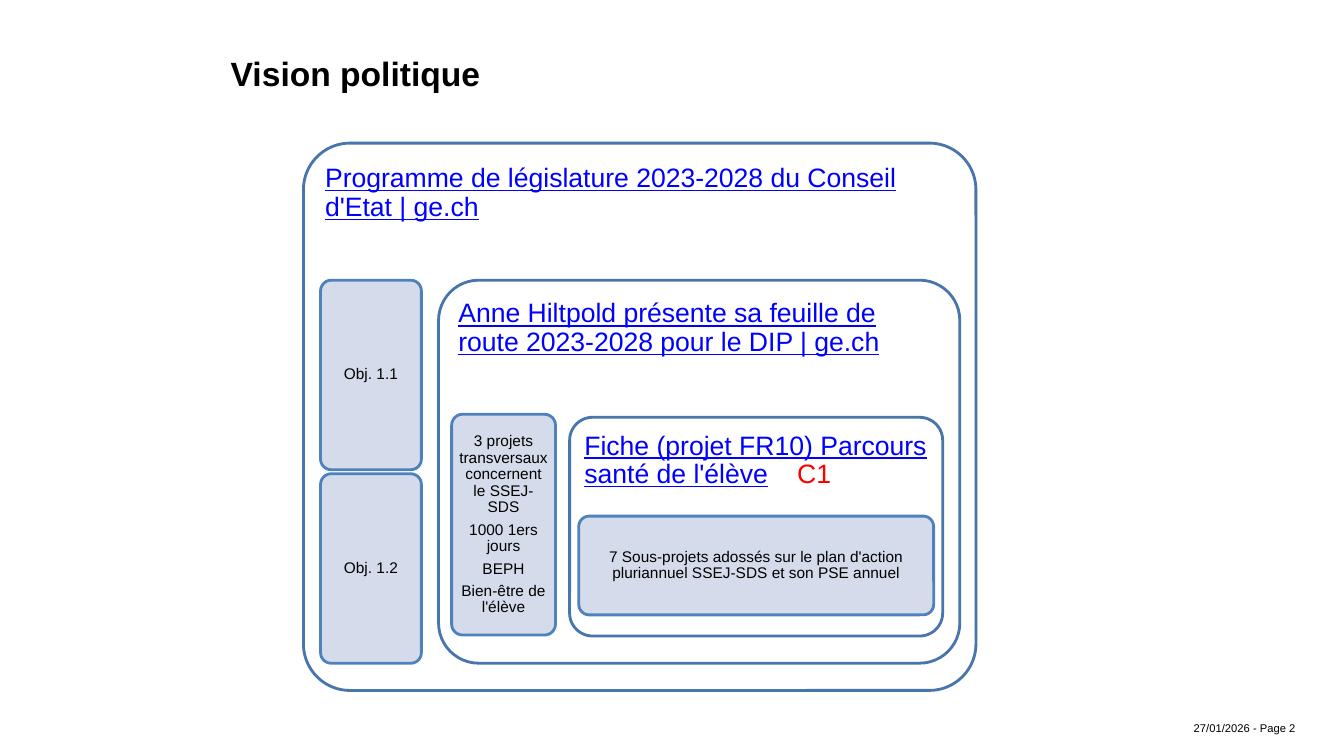
from lxml.etree import SubElement
from pptx import Presentation
from pptx.dml.color import RGBColor
from pptx.enum.shapes import MSO_SHAPE as Shape
from pptx.enum.text import MSO_ANCHOR as Anchor, PP_ALIGN as Align
from pptx.oxml.ns import qn
from pptx.util import Pt

PX = 9144
BLACK = RGBColor(0, 0, 0)
WHITE = RGBColor(255, 255, 255)
LINK = RGBColor(0, 0, 255)
RED = RGBColor(255, 0, 0)
PALE = RGBColor(0xD0, 0xD8, 0xE8)
EDGE = RGBColor(0x48, 0x75, 0xAC)
BLUE = RGBColor(0x4F, 0x81, 0xBD)

deck = Presentation()
deck.slide_width, deck.slide_height = 1333 * PX, 750 * PX
slide = deck.slides.add_slide(deck.slide_layouts[6])


def add_run(para, text, size, color, **extra):
    run = para.add_run()
    run.text = text
    look = {"name": "Arial", "size": Pt(size), **extra}
    for key, val in look.items():
        setattr(run.font, key, val)
    run.font.color.rgb = color


def add_box(spot, round_by, fill, edge, pad, anchor):
    box = slide.shapes.add_shape(Shape.ROUNDED_RECTANGLE, *[n * PX for n in spot])
    box.adjustments[0] = round_by
    box.shadow.inherit = False
    box.fill.solid()
    box.fill.fore_color.rgb = fill
    box.line.color.rgb = edge
    box.line.width = Pt(2)
    frame = box.text_frame
    look = {"word_wrap": True, "vertical_anchor": anchor}
    for side in ("left", "top", "right", "bottom"):
        look["margin_" + side] = pad * PX
    for key, val in look.items():
        setattr(frame, key, val)
    return box


labels = [
    ((219, 48, 900, 50), "Vision politique", 24, True, Align.LEFT),
    ((1112, 711, 183, 23), "27/01/2026 - Page 2", 8, False, Align.RIGHT),
]
for spot, text, size, bold, align in labels:
    frame = slide.shapes.add_textbox(*[n * PX for n in spot]).text_frame
    frame.word_wrap = True
    para = frame.paragraphs[0]
    para.alignment = align
    add_run(para, text, size, BLACK, bold=bold)

panels = [
    ((301, 142, 667, 543), 0.085,
     "Programme de législature 2023-2028 du Conseil d'Etat | ge.ch"),
    ((435, 278, 517, 380), 0.105,
     "Anne Hiltpold présente sa feuille de route 2023-2028 pour le DIP | ge.ch"),
    ((565, 414, 370, 217), 0.105,
     "Fiche (projet FR10) Parcours santé de l'élève"),
]
for spot, round_by, text in panels:
    box = add_box(spot, round_by, WHITE, EDGE, 8, Anchor.TOP)
    para = box.text_frame.paragraphs[0]
    para.alignment = Align.LEFT
    para.line_spacing = 0.9
    add_run(para, text, 19, LINK, underline=True)

tabs = SubElement(para._p.get_or_add_pPr(), qn("a:tabLst"))
SubElement(tabs, qn("a:tab"), pos=str(211 * PX), algn="l")
add_run(para, "\tC1", 19, RED, underline=False)

cards = [((318, 278 + 192 * i, 100, 188), [f"Obj. 1.{i + 1}"]) for i in range(2)]
cards += [
    ((448, 411, 103, 219), [
        "3 projets transversaux concernent le SSEJ-SDS",
        "1000 1ers jours",
        "BEPH",
        "Bien-être de l'élève",
    ]),
    ((574, 512, 352, 98), [
        "7 Sous-projets adossés sur le plan d'action "
        "pluriannuel SSEJ-SDS et son PSE annuel",
    ]),
]
for spot, lines in cards:
    box = add_box(spot, 0.105, PALE, BLUE, 3, Anchor.MIDDLE)
    tint = box._element.spPr.find(qn("a:solidFill"))[0]
    SubElement(tint, qn("a:alpha"), val="90000")
    frame = box.text_frame
    for i, text in enumerate(lines):
        para = frame.add_paragraph() if i else frame.paragraphs[0]
        para.alignment = Align.CENTER
        para.line_spacing = 0.9
        para.space_after = Pt(4)
        add_run(para, text, 11, BLACK)

deck.save("out.pptx")
